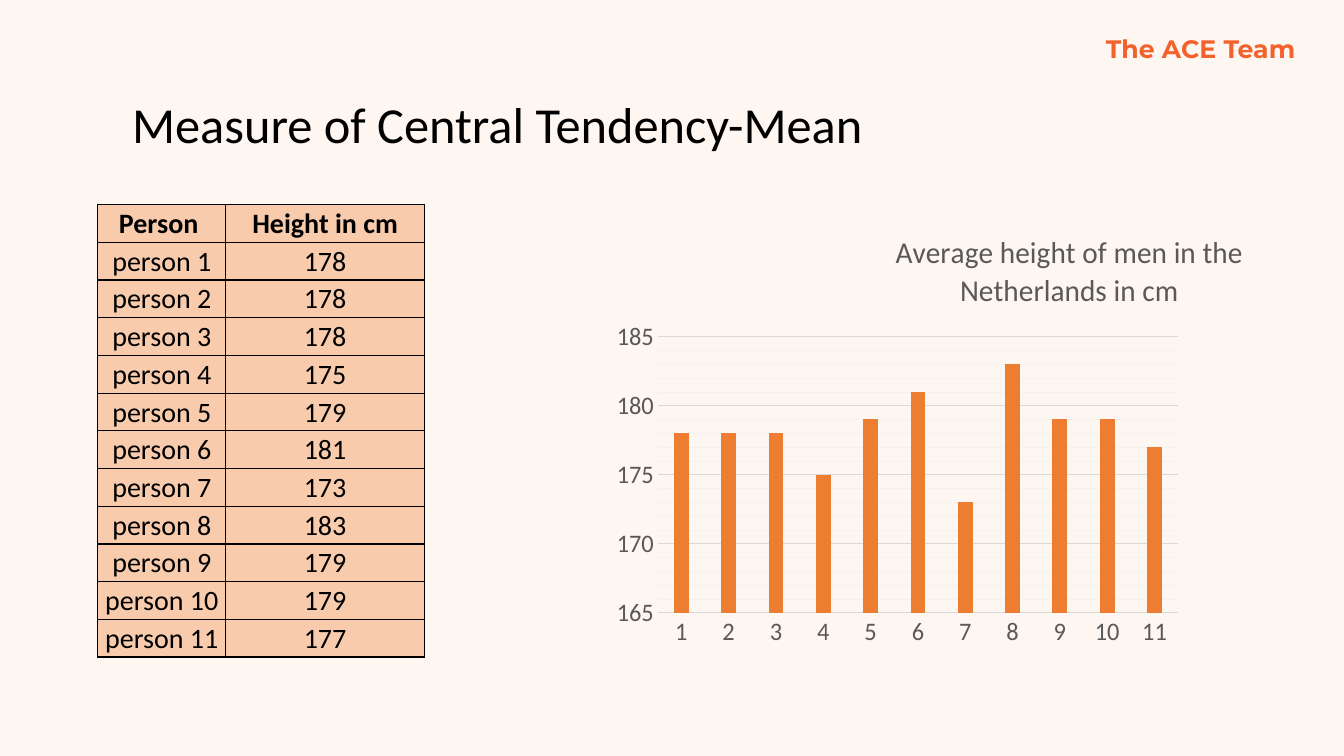
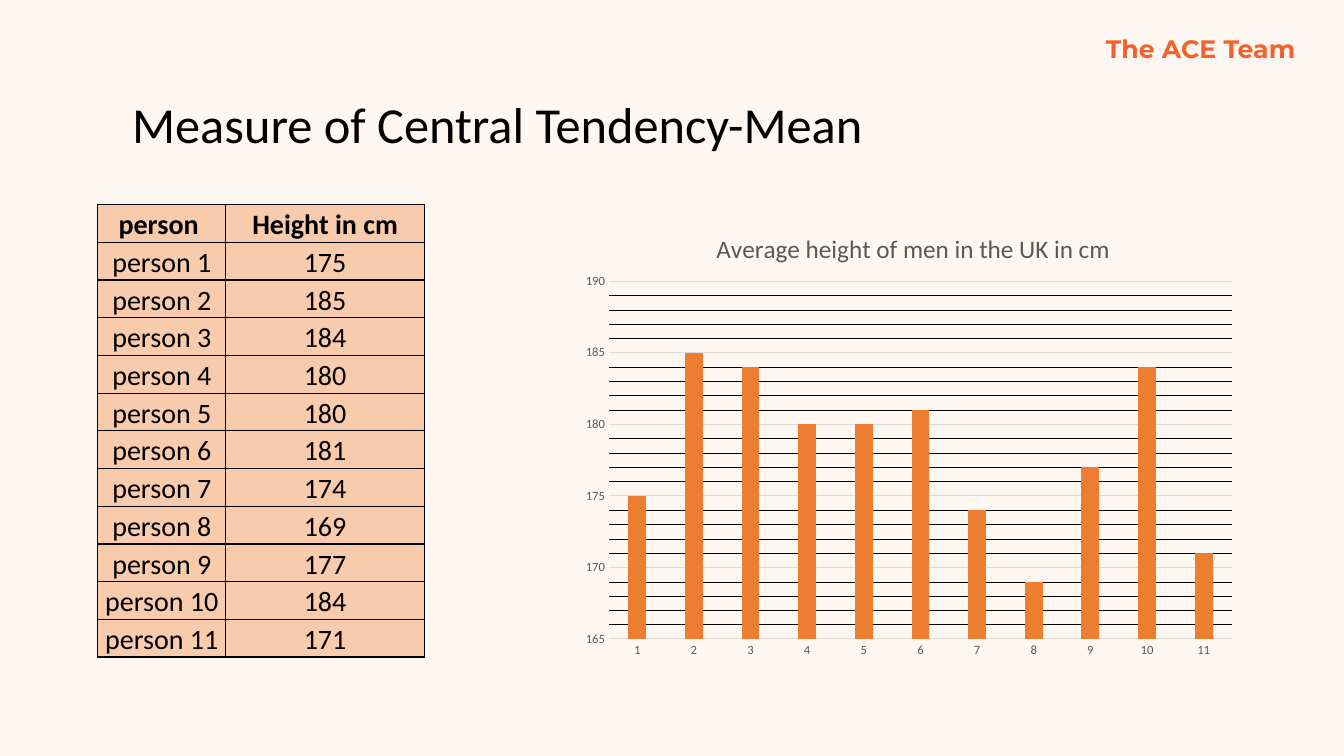
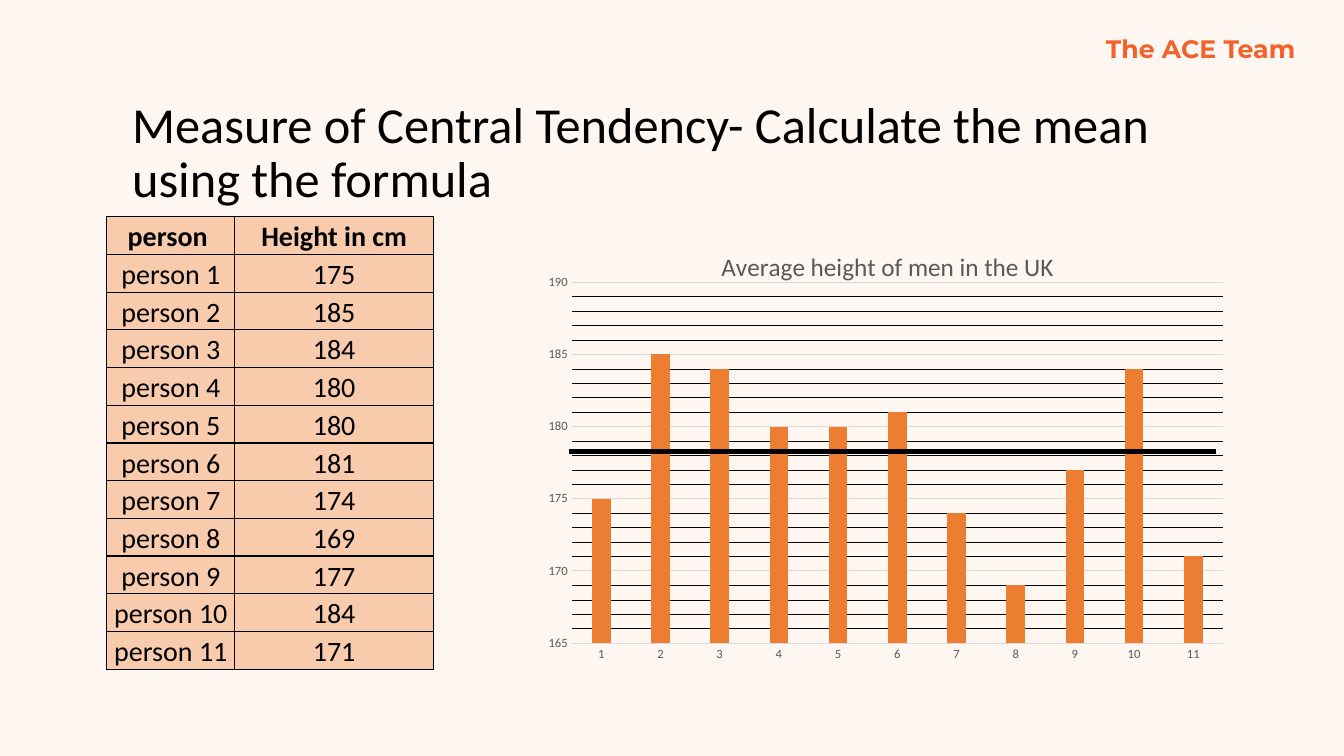
from lxml.etree import SubElement
from pptx import Presentation
from pptx.chart.data import CategoryChartData
from pptx.dml.color import RGBColor
from pptx.enum.chart import XL_CHART_TYPE, XL_TICK_MARK
from pptx.enum.shapes import MSO_CONNECTOR
from pptx.enum.text import MSO_ANCHOR, PP_ALIGN
from pptx.oxml.ns import qn
from pptx.util import Inches, Pt

CREAM = RGBColor(0xFE, 0xF6, 0xF0)
BRIGHT_ORANGE = RGBColor(0xF3, 0x62, 0x2C)
BAR_ORANGE = RGBColor(0xED, 0x7D, 0x31)
PEACH = RGBColor(0xF8, 0xCB, 0xAD)
BLACK = RGBColor(0, 0, 0)
GREY = RGBColor(0x59, 0x59, 0x59)
GRID_GREY = RGBColor(0xD9, 0xD9, 0xD9)
PALE_GREY = RGBColor(0xF2, 0xF2, 0xF2)
BODY_FONT = "Calibri"

COLUMN_WIDTHS = (1.27, 1.97)
TABLE_HEIGHT = 4.49

DUTCH_HEIGHTS = (178, 178, 178, 175, 179, 181, 173, 183, 179, 179, 177)
UK_HEIGHTS = (175, 185, 184, 180, 180, 181, 174, 169, 177, 184, 171)

# Boxes are left, top, width, height in inches, measured on the slide.
SLIDES = [
    {
        "title": "Measure of Central Tendency-Mean",
        "title_box": (1.31, 0.99, 10.38, 0.75),
        "heights": DUTCH_HEIGHTS,
        "person_header": "Person ",
        "table_at": (0.97, 2.03),
        "anchor": MSO_ANCHOR.MIDDLE,
        "chart_box": (6.02, 2.03, 6.34, 4.49),
        "plot_box": (6.54, 3.34, 5.34, 2.74),
        "chart_title": ("Average height of men in the", "Netherlands in cm"),
        "chart_title_at": (8.95, 2.27),
        "chart_title_size": 21.6,
        "axis_size": 18,
        "axis_maximum": 185,
        "minor_grid": PALE_GREY,
    },
    {
        "title": "Measure of Central Tendency-Mean",
        "title_box": (1.31, 0.99, 10.38, 0.75),
        "heights": UK_HEIGHTS,
        "person_header": "person ",
        "table_at": (0.97, 2.03),
        "anchor": MSO_ANCHOR.BOTTOM,
        "chart_box": (5.68, 2.03, 6.68, 4.59),
        "plot_box": (6.04, 2.79, 6.18, 3.55),
        "chart_title": ("Average height of men in the UK in cm",),
        "chart_title_at": (7.06, 2.25),
        "chart_title_size": 18,
        "axis_size": 9,
        "axis_maximum": 190,
        "minor_grid": BLACK,
    },
    {
        "title": "Measure of Central Tendency- Calculate the mean using the formula",
        "title_box": (1.31, 0.99, 10.69, 1.05),
        "heights": UK_HEIGHTS,
        "person_header": "person ",
        "table_at": (1.06, 2.15),
        "anchor": MSO_ANCHOR.BOTTOM,
        "chart_box": (5.27, 2.22, 7.01, 4.49),
        "plot_box": (5.67, 2.8, 6.46, 3.58),
        "chart_title": ("Average height of men in the UK",),
        "chart_title_at": (7.11, 2.43),
        "chart_title_size": 18,
        "axis_size": 9,
        "axis_maximum": 190,
        "minor_grid": BLACK,
        "mean_line": (5.64, 4.48, 12.06, 4.48),
    },
]


def add_run(paragraph, text, size, color, bold=False, font_name=BODY_FONT):
    run = paragraph.add_run()
    run.text = text
    run.font.name = font_name
    run.font.size = Pt(size)
    run.font.bold = bold
    run.font.color.rgb = color


def place_in_chart(element, position, chart_box, box):
    """Fix a chart part at a slide position, as fractions of the chart's box."""
    layout = element.find(qn("c:layout"))
    if layout is None:
        layout = SubElement(element, qn("c:layout"))
        element.insert(position, layout)
    manual = SubElement(layout, qn("c:manualLayout"))
    left, top, width, height = chart_box
    settings = [("xMode", "edge"), ("yMode", "edge"),
                ("x", (box[0] - left) / width), ("y", (box[1] - top) / height)]
    if len(box) == 4:
        settings.insert(0, ("layoutTarget", "inner"))
        settings += [("w", box[2] / width), ("h", box[3] / height)]
    for name, value in settings:
        SubElement(manual, qn(f"c:{name}")).set("val", str(value))


presentation = Presentation()
presentation.slide_width = Inches(13.33)
presentation.slide_height = Inches(7.5)
blank_layout = presentation.slide_layouts[6]
blank_layout.background.fill.solid()
blank_layout.background.fill.fore_color.rgb = CREAM

for number, content in enumerate(SLIDES):
    slide = presentation.slides.add_slide(blank_layout)

    # The team name is made once and moved to the shared layout.
    if number == 0:
        team_box = slide.shapes.add_textbox(Inches(10.87), Inches(0.28), Inches(2.12), Inches(0.4))
        team_box.text_frame.word_wrap = False
        add_run(team_box.text_frame.paragraphs[0], "The ACE Team", 18, BRIGHT_ORANGE, True, "Montserrat")
        blank_layout.shapes.element.append(team_box.element)

    title_frame = slide.shapes.add_textbox(*map(Inches, content["title_box"])).text_frame
    title_frame.word_wrap = True
    title_frame.margin_left = title_frame.margin_right = 0
    title_frame.margin_top = title_frame.margin_bottom = 0
    title_frame.paragraphs[0].line_spacing = 0.9
    add_run(title_frame.paragraphs[0], content["title"], 36, BLACK)

    # Table of heights
    rows = [(content["person_header"], "Height in cm")]
    rows += [(f"person {person}", str(height)) for person, height in enumerate(content["heights"], 1)]
    table_left, table_top = content["table_at"]
    table = slide.shapes.add_table(
        len(rows), 2, Inches(table_left), Inches(table_top),
        Inches(sum(COLUMN_WIDTHS)), Inches(TABLE_HEIGHT)).table
    for column, width in zip(table.columns, COLUMN_WIDTHS):
        column.width = Inches(width)
    for row_number, texts in enumerate(rows):
        table.rows[row_number].height = Inches(TABLE_HEIGHT / len(rows))
        for column_number, text in enumerate(texts):
            cell = table.cell(row_number, column_number)
            cell.vertical_anchor = content["anchor"]
            cell.margin_left = cell.margin_right = cell.margin_top = Inches(0.01)
            cell.margin_bottom = 0
            properties = cell._tc.get_or_add_tcPr()
            for side in ("lnL", "lnR", "lnT", "lnB"):
                border = SubElement(properties, qn(f"a:{side}"), w=str(Pt(1)))
                border_fill = SubElement(border, qn("a:solidFill"))
                SubElement(border_fill, qn("a:srgbClr"), val=str(BLACK))
            cell.fill.solid()
            cell.fill.fore_color.rgb = PEACH
            paragraph = cell.text_frame.paragraphs[0]
            paragraph.alignment = PP_ALIGN.CENTER
            add_run(paragraph, text, 20, BLACK, bold=row_number == 0)

    # Chart of heights
    chart_data = CategoryChartData()
    chart_data.categories = [str(person) for person in range(1, len(rows))]
    chart_data.add_series("Series 1", content["heights"])
    chart_box = content["chart_box"]
    chart = slide.shapes.add_chart(
        XL_CHART_TYPE.COLUMN_CLUSTERED, *map(Inches, chart_box), chart_data).chart
    chart.has_legend = False
    chart.font.name = BODY_FONT
    chart.font.size = Pt(content["axis_size"])
    chart.font.color.rgb = GREY

    chart.has_title = True
    chart_title = chart.chart_title
    chart_title_frame = chart_title.text_frame
    for line_number, line in enumerate(content["chart_title"]):
        paragraph = chart_title_frame.add_paragraph() if line_number else chart_title_frame.paragraphs[0]
        add_run(paragraph, line, content["chart_title_size"], GREY)
    place_in_chart(chart_title._element, 1, chart_box, content["chart_title_at"])
    plot_area = chart._chartSpace.chart.plotArea
    place_in_chart(plot_area, 0, chart_box, content["plot_box"])

    plot = chart.plots[0]
    plot.vary_by_categories = False
    plot.gap_width = 219
    plot.overlap = -27
    bar_fill = plot.series[0].format.fill
    bar_fill.solid()
    bar_fill.fore_color.rgb = BAR_ORANGE

    category_axis, value_axis = chart.category_axis, chart.value_axis
    for axis in (category_axis, value_axis):
        axis.major_tick_mark = axis.minor_tick_mark = XL_TICK_MARK.NONE
        axis.tick_labels.font.name = BODY_FONT
        axis.tick_labels.font.size = Pt(content["axis_size"])
        axis.tick_labels.font.color.rgb = GREY
    value_axis.format.line.fill.background()
    value_axis.minimum_scale = 165
    value_axis.maximum_scale = content["axis_maximum"]
    value_axis.major_unit = 5
    value_axis.minor_unit = 1
    value_axis.has_major_gridlines = value_axis.has_minor_gridlines = True
    for line in (category_axis.format.line, value_axis.major_gridlines.format.line):
        line.color.rgb = GRID_GREY
        line.width = Pt(0.75)
    minor_gridlines = value_axis._element.find(qn("c:minorGridlines"))
    minor_properties = SubElement(minor_gridlines, qn("c:spPr"))
    minor_line = SubElement(minor_properties, qn("a:ln"), w=str(Pt(0.25)))
    minor_fill = SubElement(minor_line, qn("a:solidFill"))
    SubElement(minor_fill, qn("a:srgbClr"), val=str(content["minor_grid"]))

    if "mean_line" in content:
        mean_line = slide.shapes.add_connector(
            MSO_CONNECTOR.STRAIGHT, *map(Inches, content["mean_line"]))
        mean_line.line.color.rgb = BLACK
        mean_line.line.width = Pt(3)
        SubElement(mean_line._element.spPr, qn("a:effectLst"))

presentation.save("out.pptx")
